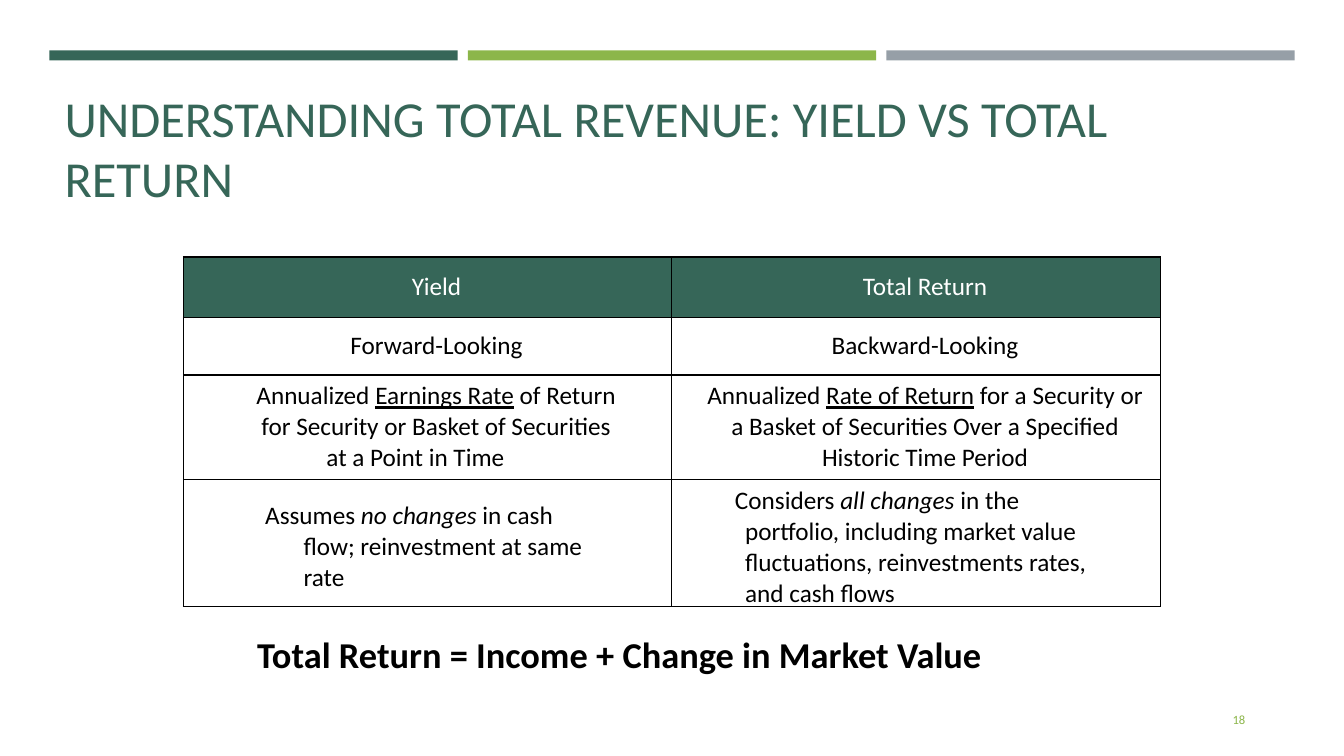
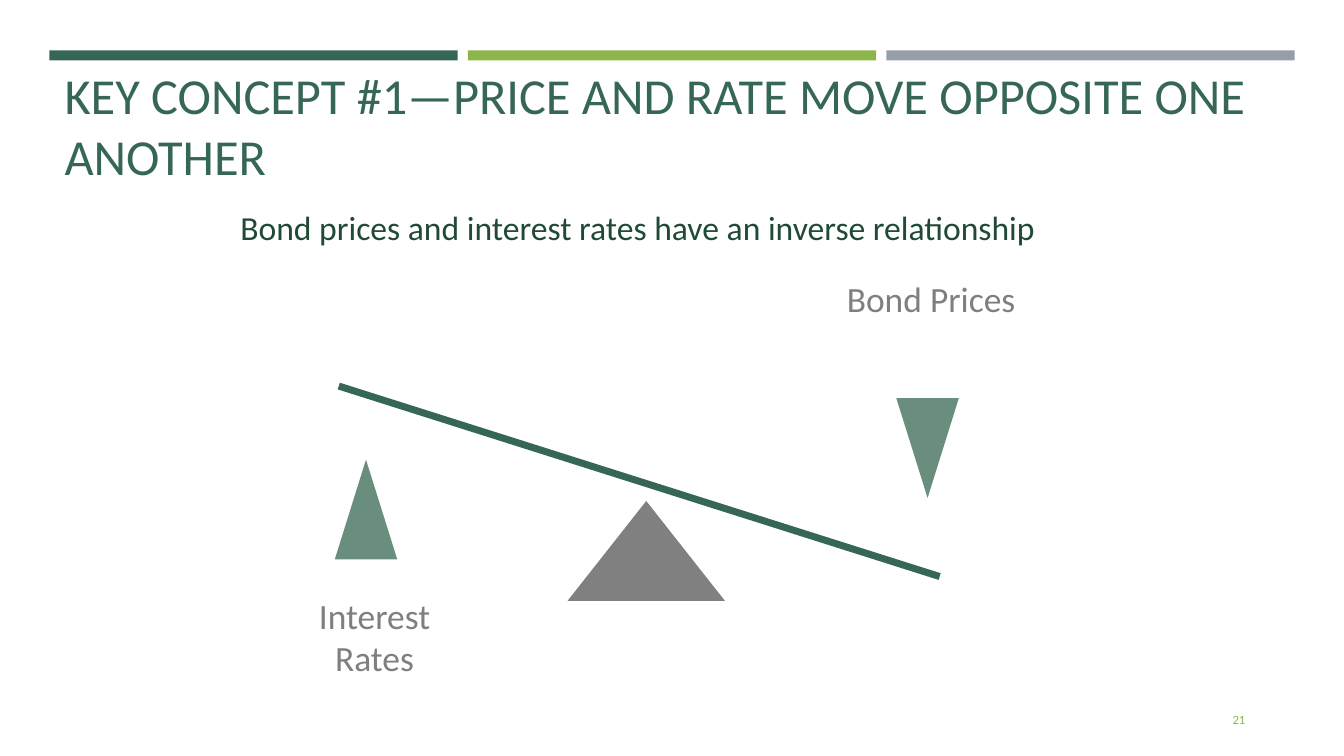
from lxml import etree
from pptx import Presentation
from pptx.dml.color import RGBColor
from pptx.enum.shapes import MSO_CONNECTOR as Connector, MSO_SHAPE as Shape
from pptx.enum.text import MSO_ANCHOR as Anchor, PP_ALIGN as Align
from pptx.oxml.ns import qn
from pptx.util import Inches, Pt

# Shared look
FONT = "Calibri"
GREEN, LIME, SLATE = "366658", "8CB64A", "969FA7"
SAGE, FOREST, GRAY, LABEL_GRAY = "6A8E7D", "204A36", "808080", "7F7F7F"
BLACK, WHITE = "000000", "FFFFFF"
BANDS = [GREEN, LIME, SLATE]
BAND_LEFT, BAND_TOP, BAND_WIDTH, BAND_HEIGHT, BAND_GAP = 0.49, 0.5, 4.05, 0.1, 0.1
TITLE_STYLE = {"size": 36, "color": GREEN}
NUMBER_STYLE = {"size": 9, "color": LIME}
LABEL_STYLE = {"size": 25.3, "color": LABEL_GRAY}

# Slide 1 content: a paragraph is a list of (text, format) runs
UNDERLINE, ITALIC = {"underline": True}, {"italic": True}
YIELD_TITLE = "UNDERSTANDING TOTAL REVENUE: YIELD VS TOTAL RETURN"
FORMULA = "Total Return = Income + Change in Market Value"
COLUMN_WIDTHS = [4.84, 4.85]
# Each row: height, then cells of
# (paragraphs, left indents, first-line indent, top margin, right margin, alignment)
COMPARISON = [
    (0.6, [
        ([[("Yield", {})]], [0.18], 0, 0.14, 0, Align.CENTER),
        ([[("Total Return", {})]], [0.18], 0, 0.14, 0, Align.CENTER),
    ]),
    (0.57, [
        ([[("Forward-Looking", {})]], [0.18], 0, 0.13, 0, Align.CENTER),
        ([[("Backward-Looking", {})]], [0.18], 0, 0.13, 0, Align.CENTER),
    ]),
    (1.04, [
        ([[("Annualized ", {}), ("Earnings Rate", UNDERLINE),
           (" of Return for Security or Basket of Securities", {})],
          [("at a Point in Time", {})]],
         [0.59, 0.18], 0, 0.06, 0.42, Align.CENTER),
        ([[("Annualized ", {}), ("Rate of Return", UNDERLINE),
           (" for a Security or a Basket of Securities Over a Specified "
            "Historic Time Period", {})]],
         [0.31], 0, 0.06, 0.13, Align.CENTER),
    ]),
    (1.04, [
        ([[("Assumes ", {}), ("no changes ", ITALIC),
           ("in cash flow; reinvestment at same rate", {})]],
         [1.19], -0.38, 0.21, 0.8, Align.LEFT),
        ([[("Considers ", {}), ("all changes ", ITALIC),
           ("in the portfolio, including market value fluctuations, "
            "reinvestments rates, and cash flows", {})]],
         [0.73], -0.1, 0.06, 0.6, Align.LEFT),
    ]),
]

# Slide 2 content
PRICE_TITLE = "KEY CONCEPT #1—PRICE AND RATE MOVE OPPOSITE ONE ANOTHER"
INVERSE = "Bond prices and interest rates have an inverse relationship"
BEAM = (3.36, 3.83, 9.32, 5.72)
FULCRUM = (5.63, 4.97, 1.56, 0.99)
DIRECTIONS = [  # left, top, rotation
    (8.89, 3.95, 180),
    (3.32, 4.56, 0),
]
LABELS = [  # left, top, lines
    (8.35, 2.71, ["Bond Prices"]),
    (2.83, 5.85, ["Interest", "Rates"]),
]


def rgb(value):
    return RGBColor.from_string(value)


def inches(*lengths):
    return [Inches(length) for length in lengths]


def add_run(paragraph, text, size, color, **formats):
    run = paragraph.add_run()
    run.text = text
    run.font.color.rgb = rgb(color)
    for name, value in {"name": FONT, "size": Pt(size), **formats}.items():
        setattr(run.font, name, value)


def add_text(slide, box, lines, style, align=Align.LEFT, anchor=Anchor.TOP, inset=(0, 0)):
    frame = slide.shapes.add_textbox(*inches(*box)).text_frame
    side, end = inches(*inset)
    formats = {"word_wrap": True, "vertical_anchor": anchor,
               "margin_left": side, "margin_right": side,
               "margin_top": end, "margin_bottom": end}
    for name, value in formats.items():
        setattr(frame, name, value)
    for index, line in enumerate(lines):
        paragraph = frame.add_paragraph() if index else frame.paragraphs[0]
        paragraph.alignment = align
        add_run(paragraph, line, **style)


def add_solid(shapes, kind, box, color, rotation=0):
    solid = shapes.add_shape(kind, *inches(*box))
    solid.shadow.inherit = False
    solid.fill.solid()
    solid.fill.fore_color.rgb = rgb(color)
    solid.line.fill.background()
    solid.rotation = rotation


def add_slide(deck, title, title_top, number):
    slide = deck.slides.add_slide(deck.slide_layouts[6])
    for index, color in enumerate(BANDS):
        left = BAND_LEFT + index * (BAND_WIDTH + BAND_GAP)
        add_solid(slide.shapes, Shape.RECTANGLE,
                  (left, BAND_TOP, BAND_WIDTH, BAND_HEIGHT), color)
    add_text(slide, (0.64, title_top, 12.06, 1.3), [title], TITLE_STYLE,
             anchor=Anchor.BOTTOM)
    add_text(slide, (11.34, 6.94, 1.11, 0.4), [number], NUMBER_STYLE,
             Align.RIGHT, Anchor.MIDDLE, (0.1, 0.05))
    return slide


def border_cell(cell):
    properties = cell._tc.get_or_add_tcPr()
    for index, side in enumerate(("lnL", "lnR", "lnT", "lnB")):
        line = etree.Element(qn(f"a:{side}"), w=str(Pt(1)))
        fill = etree.SubElement(line, qn("a:solidFill"))
        etree.SubElement(fill, qn("a:srgbClr"), val=BLACK)
        properties.insert(index, line)


def fill_cell(cell, content, is_header):
    paragraphs, indents, first_line, top, right, align = content
    margins = {"margin_left": 0, "margin_right": right,
               "margin_top": top, "margin_bottom": 0}
    for name, value in margins.items():
        setattr(cell, name, Inches(value))
    if is_header:
        cell.fill.solid()
        cell.fill.fore_color.rgb = rgb(GREEN)
    else:
        cell.fill.background()
    border_cell(cell)
    frame = cell.text_frame
    for index, (runs, indent) in enumerate(zip(paragraphs, indents)):
        paragraph = frame.add_paragraph() if index else frame.paragraphs[0]
        paragraph.alignment = align
        spacing = paragraph._p.get_or_add_pPr()
        spacing.set("marL", str(Inches(indent)))
        spacing.set("indent", str(Inches(first_line)))
        for text, formats in runs:
            add_run(paragraph, text, 18, WHITE if is_header else BLACK, **formats)


def add_comparison(slide):
    height = sum(row_height for row_height, _ in COMPARISON)
    table = slide.shapes.add_table(
        len(COMPARISON), len(COLUMN_WIDTHS),
        *inches(1.82, 2.55, sum(COLUMN_WIDTHS), height)).table
    table.first_row = table.horz_banding = False
    for column, width in zip(table.columns, COLUMN_WIDTHS):
        column.width = Inches(width)
    for row_index, (row_height, cells) in enumerate(COMPARISON):
        table.rows[row_index].height = Inches(row_height)
        for column_index, content in enumerate(cells):
            fill_cell(table.cell(row_index, column_index), content, row_index == 0)


def add_seesaw(slide):
    seesaw = slide.shapes.add_group_shape().shapes
    beam = seesaw.add_connector(Connector.STRAIGHT, *inches(*BEAM))
    beam.line.color.rgb = rgb(GREEN)
    beam.line.width = Pt(5)
    etree.SubElement(beam._element.spPr, qn("a:effectLst"))
    add_solid(seesaw, Shape.ISOSCELES_TRIANGLE, FULCRUM, GRAY)


def main():
    deck = Presentation()
    deck.slide_width, deck.slide_height = inches(13.33, 7.5)

    # Yield against total return
    slide = add_slide(deck, YIELD_TITLE, 0.76, "18")
    add_comparison(slide)
    add_text(slide, (2.55, 6.26, 8.24, 0.45), [FORMULA],
             {"size": 26, "color": BLACK, "bold": True}, inset=(0, 0.01))

    # Price and rate seesaw
    slide = add_slide(deck, PRICE_TITLE, 0.54, "21")
    add_seesaw(slide)
    for left, top, rotation in DIRECTIONS:
        add_solid(slide.shapes, Shape.ISOSCELES_TRIANGLE,
                  (left, top, 0.62, 0.99), SAGE, rotation)
    for left, top, lines in LABELS:
        add_text(slide, (left, top, 1.77, 0.92), lines, LABEL_STYLE,
                 Align.CENTER, inset=(0.04, 0.04))
    add_text(slide, (0.37, 2, 11.91, 0.5), [INVERSE],
             {"size": 24, "color": FOREST}, Align.CENTER, inset=(0.1, 0.05))

    deck.save("out.pptx")


if __name__ == "__main__":
    main()
